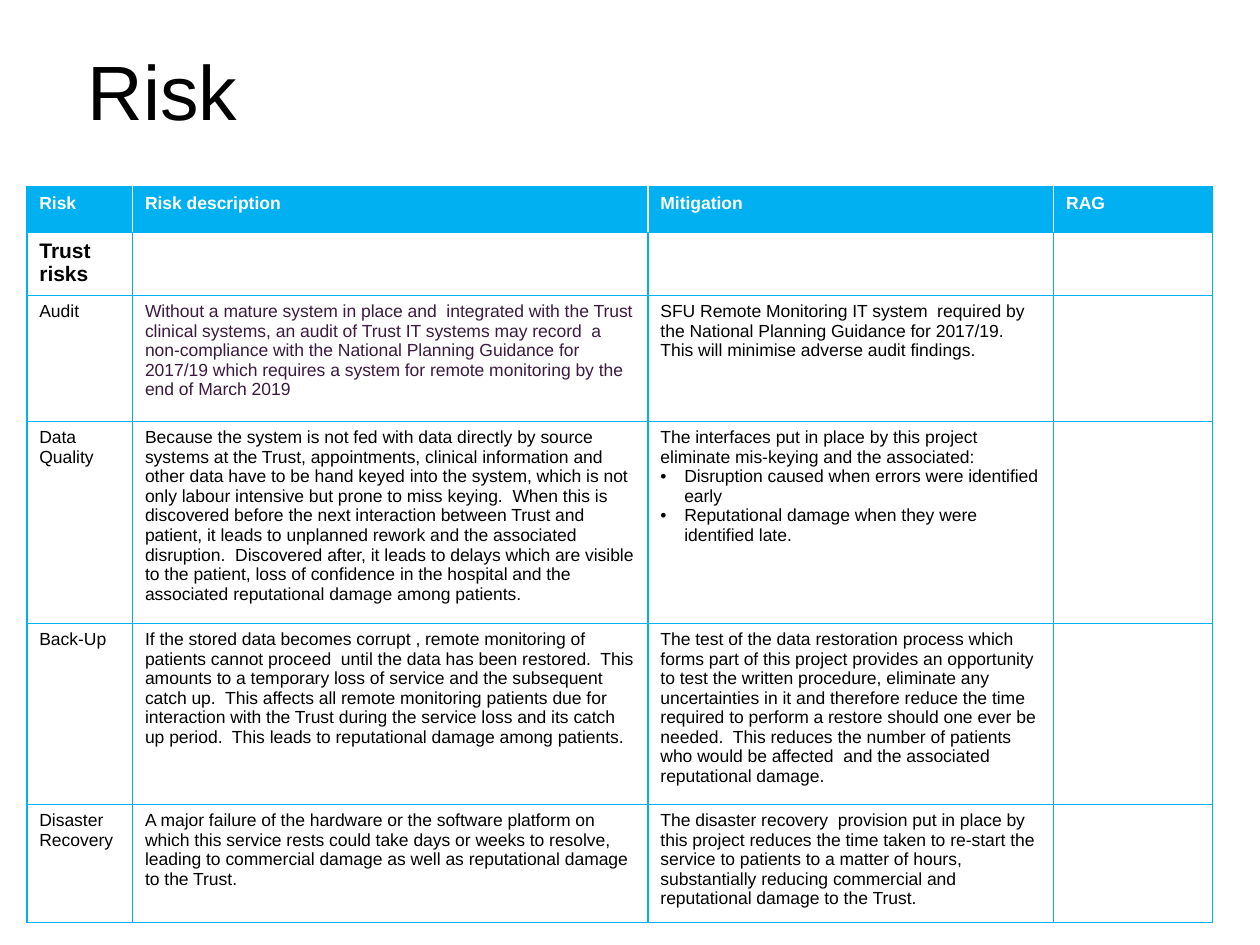
from lxml.etree import SubElement
from pptx import Presentation
from pptx.dml.color import RGBColor
from pptx.enum.text import MSO_ANCHOR
from pptx.oxml.ns import qn
from pptx.util import Cm, Pt

BLUE, WHITE, BLACK, PLUM = "00B0F0", "FFFFFF", "000000", "3C1A40"
BULLET = "• "

# Table content: one list per row, one line per paragraph
HEAD = ["Risk", "Risk description", "Mitigation", "RAG"]
ROWS = [
    HEAD,
    ["Trust risks", "", "", ""],
    ["Audit",
     "Without a mature system in place and  integrated with the Trust clinical "
     "systems, an audit of Trust IT systems may record  a non-compliance with the "
     "National Planning Guidance for 2017/19 which requires a system for remote "
     "monitoring by the end of March 2019",
     "SFU Remote Monitoring IT system  required by the National Planning Guidance "
     "for 2017/19.\nThis will minimise adverse audit findings.", ""],
    ["Data Quality",
     "Because the system is not fed with data directly by source systems at the "
     "Trust, appointments, clinical information and other data have to be hand "
     "keyed into the system, which is not only labour intensive but prone to miss "
     "keying.  When this is discovered before the next interaction between Trust "
     "and patient, it leads to unplanned rework and the associated disruption.  "
     "Discovered after, it leads to delays which are visible to the patient, loss "
     "of confidence in the hospital and the associated reputational damage among "
     "patients.",
     "The interfaces put in place by this project eliminate mis-keying and the "
     "associated:\n"
     "• Disruption caused when errors were identified early\n"
     "• Reputational damage when they were identified late.", ""],
    ["Back-Up",
     "If the stored data becomes corrupt , remote monitoring of patients cannot "
     "proceed  until the data has been restored.  This amounts to a temporary loss "
     "of service and the subsequent catch up.  This affects all remote monitoring "
     "patients due for interaction with the Trust during the service loss and its "
     "catch up period.  This leads to reputational damage among patients.",
     "The test of the data restoration process which forms part of this project "
     "provides an opportunity to test the written procedure, eliminate any "
     "uncertainties in it and therefore reduce the time required to perform a "
     "restore should one ever be needed.  This reduces the number of patients who "
     "would be affected  and the associated reputational damage.", ""],
    ["Disaster Recovery",
     "A major failure of the hardware or the software platform on which this "
     "service rests could take days or weeks to resolve, leading to commercial "
     "damage as well as reputational damage to the Trust.",
     "The disaster recovery  provision put in place by this project reduces the "
     "time taken to re-start the service to patients to a matter of hours, "
     "substantially reducing commercial and reputational damage to the Trust.", ""],
]
WIDTHS = [2.13, 10.39, 8.18, 3.2]
HEIGHTS = [0.92, 1.2, 2.54, 3.79, 3.41, 2.23]


def color(code):
    return RGBColor.from_string(code)


class Deck:
    font = "Arial"

    def __init__(self, width, height):
        self.prs = Presentation()
        self.prs.slide_width, self.prs.slide_height = Cm(width), Cm(height)
        self.slide = self.prs.slides.add_slide(self.prs.slide_layouts[6])

    def style(self, para, size, code, bold=False):
        for run in para.runs:
            font = run.font
            font.name, font.size, font.bold = self.font, Pt(size), bold
            font.color.rgb = color(code)

    def title(self, text, left, top, width, height):
        frame = self.slide.shapes.add_textbox(
            Cm(left), Cm(top), Cm(width), Cm(height)).text_frame
        frame.word_wrap = True
        frame.vertical_anchor = MSO_ANCHOR.MIDDLE
        frame.text = text
        frame.paragraphs[0].line_spacing = 0.9
        self.style(frame.paragraphs[0], 44, BLACK)

    def bullet(self, para):
        props = para._p.get_or_add_pPr()
        props.set("marL", str(Cm(0.48)))
        props.set("indent", str(-Cm(0.48)))
        SubElement(props, qn("a:buFont"), typeface=self.font)
        SubElement(props, qn("a:buChar"), char=BULLET.strip())

    def border(self, cell, codes):
        props = cell._tc.get_or_add_tcPr()
        for side, code in zip("LRTB", codes):
            line = SubElement(props, qn(f"a:ln{side}"), w=str(Pt(1)))
            fill = SubElement(line, qn("a:solidFill"))
            SubElement(fill, qn("a:srgbClr"), val=code)

    def cell(self, cell, text, size, code, bold):
        cell.text_frame.text = text
        for para in cell.text_frame.paragraphs:
            if para.text.startswith(BULLET):
                para.text = para.text.removeprefix(BULLET)
                self.bullet(para)
            self.style(para, size, code, bold)

    def table(self, rows, left, top, widths, heights):
        table = self.slide.shapes.add_table(
            len(rows), len(widths), Cm(left), Cm(top),
            Cm(sum(widths)), Cm(sum(heights))).table
        table.horz_banding = False
        for col, width in zip(table.columns, widths):
            col.width = Cm(width)
        last = len(widths) - 1
        for r, texts in enumerate(rows):
            table.rows[r].height = Cm(heights[r])
            for c, text in enumerate(texts):
                cell = table.cell(r, c)
                head = r == 0
                code = WHITE if head else PLUM if (r, c) == (2, 1) else BLACK
                self.cell(cell, text, 12 if r == 1 else 10, code, r < 2)
                # White lines divide the header cells only
                inner = WHITE if head else BLUE
                self.border(cell, [inner if c else BLUE,
                                   inner if c < last else BLUE, BLUE, BLUE])
                cell.fill.solid()
                cell.fill.fore_color.rgb = color(BLUE if head else WHITE)


def main():
    deck = Deck(25.4, 19.05)
    # Heading
    deck.title("Risk", 1.52, 0.81, 14.76, 2.23)
    # Risk register
    deck.table(ROWS, 0.54, 3.77, WIDTHS, HEIGHTS)
    deck.prs.save("out.pptx")


if __name__ == "__main__":
    main()
